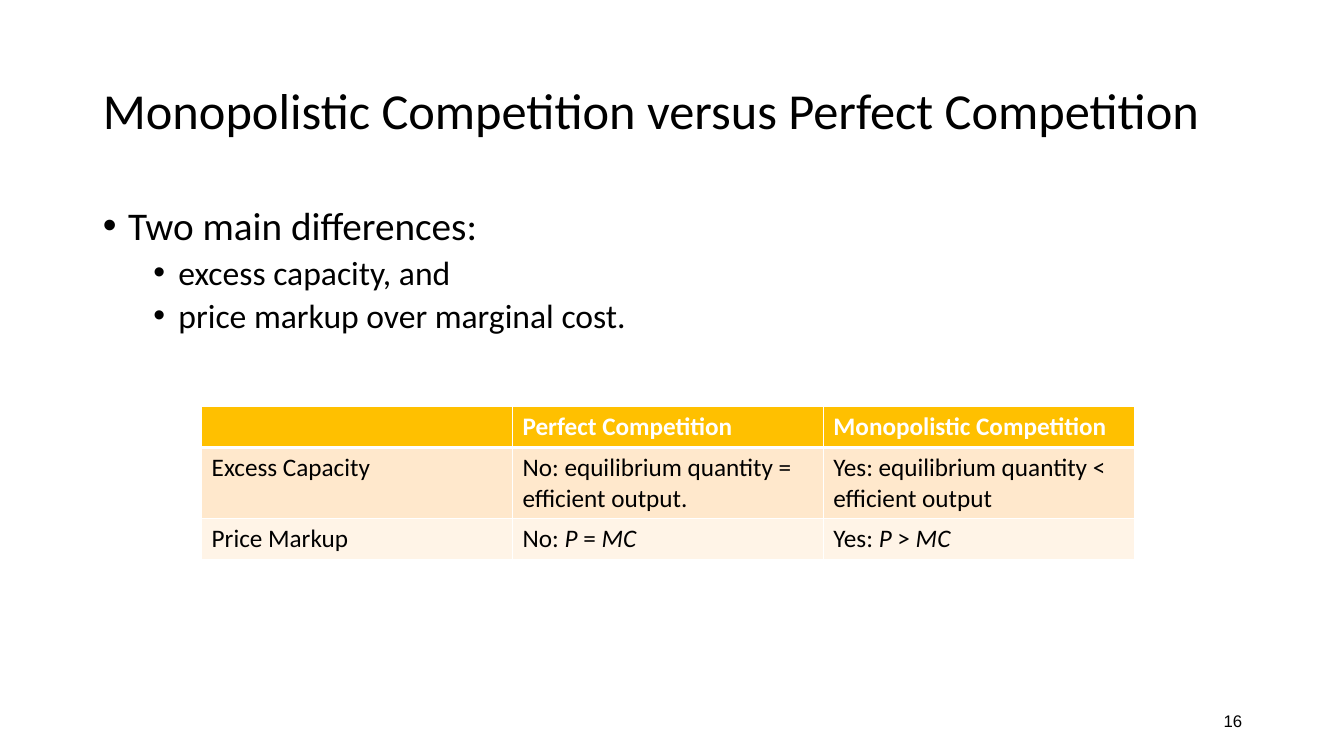
from lxml import etree
from pptx import Presentation
from pptx.dml.color import RGBColor
from pptx.enum import text
from pptx.oxml import ns
from pptx.util import Inches, Pt

BLACK, WHITE = "000000", "FFFFFF"
HEADER_FILL, ROW_FILLS = "FFC000", ("FFE8CC", "FFF4E7")

# Each body entry is a list of (text, italic) pieces
COMPARISON = [
    ["", "Perfect Competition", "Monopolistic Competition"],
    ["Excess Capacity", "No: equilibrium quantity = efficient output.",
     "Yes: equilibrium quantity < efficient output"],
    ["Price Markup",
     [("No: ", False), ("P", True), (" = ", False), ("MC", True)],
     [("Yes: ", False), ("P", True), (" > ", False), ("MC", True)]],
]
ROW_HEIGHTS = (0.41, 0.7, 0.41)


def color(hex_value):
    return RGBColor.from_string(hex_value)


def set_font(paragraph, size, hex_value=BLACK, name="Calibri", bold=False):
    font = paragraph.font
    font.size, font.name, font.bold = Pt(size), name, bold
    font.color.rgb = color(hex_value)


def place(shape, box):
    shape.left, shape.top, shape.width, shape.height = map(Inches, box)


def set_bullet(paragraph, margin, hanging=0.25):
    properties = paragraph._p.get_or_add_pPr()
    properties.set("marL", str(Inches(margin)))
    properties.set("indent", str(-Inches(hanging)))
    font = etree.SubElement(properties, ns.qn("a:buFont"))
    font.set("typeface", "Arial")
    etree.SubElement(properties, ns.qn("a:buChar")).set("char", "•")


def set_borders(cell, widths):
    """Draw white borders; widths holds points for left, right, top, bottom."""
    properties = cell._tc.get_or_add_tcPr()
    for index, (side, width) in enumerate(zip("LRTB", widths)):
        line = etree.Element(ns.qn(f"a:ln{side}"), w=str(Pt(width)))
        fill = etree.SubElement(line, ns.qn("a:solidFill"))
        etree.SubElement(fill, ns.qn("a:srgbClr")).set("val", WHITE)
        properties.insert(index, line)


def add_title(slide, box, wording):
    title = slide.shapes.title
    place(title, box)
    frame = title.text_frame
    frame.text = wording
    frame.auto_size = text.MSO_AUTO_SIZE.NONE
    frame.vertical_anchor = text.MSO_ANCHOR.MIDDLE
    heading = frame.paragraphs[0]
    heading.alignment = text.PP_ALIGN.LEFT
    heading.line_spacing = 0.9
    set_font(heading, 36)


def add_differences(slide, box, entries):
    body = slide.placeholders[1]
    place(body, box)
    frame = body.text_frame
    frame.text = "\n".join(wording for wording, level in entries)
    frame.auto_size = text.MSO_AUTO_SIZE.NONE
    for entry, (wording, level) in zip(frame.paragraphs, entries):
        entry.level = level
        entry.line_spacing = 0.9
        entry.space_before = Pt(5 if level else 10)
        set_font(entry, 24 if level else 28)
        set_bullet(entry, 0.25 + 0.5 * level)


def add_comparison(slide, box, rows):
    table = slide.shapes.add_table(len(rows), len(rows[0]), *map(Inches, box)).table
    for row, height in zip(table.rows, ROW_HEIGHTS):
        row.height = Inches(height)
    for r, entries in enumerate(rows):
        is_header = r == 0
        for c, entry in enumerate(entries):
            cell = table.cell(r, c)
            cell.fill.solid()
            cell.fill.fore_color.rgb = color(HEADER_FILL if is_header else ROW_FILLS[r - 1])
            set_borders(cell, (1, 1, 3 if r == 1 else 1, 3 if is_header else 1))
            paragraph = cell.text_frame.paragraphs[0]
            set_font(paragraph, 18, WHITE if is_header else BLACK, bold=is_header)
            if isinstance(entry, str):
                paragraph.text = entry
                continue
            for piece, italic in entry:
                run = paragraph.add_run()
                run.text = piece
                run.font.italic = italic


def add_page_number(slide, box, number):
    frame = slide.shapes.add_textbox(*map(Inches, box)).text_frame
    frame.word_wrap = True
    frame.vertical_anchor = text.MSO_ANCHOR.MIDDLE
    page = frame.paragraphs[0]
    page.text = number
    page.alignment = text.PP_ALIGN.RIGHT
    set_font(page, 12, name="Arial")


def main():
    deck = Presentation()
    deck.slide_width, deck.slide_height = Inches(13.33), Inches(7.5)
    slide = deck.slides.add_slide(deck.slide_layouts[1])

    add_title(slide, (0.92, 0.4, 11.5, 1.45),
              "Monopolistic Competition versus Perfect Competition")
    add_differences(slide, (0.92, 2, 11.5, 4.76), [
        ("Two main differences:", 0),
        ("excess capacity, and", 1),
        ("price markup over marginal cost.", 1),
    ])
    add_page_number(slide, (9.42, 6.95, 3, 0.4), "16")
    add_comparison(slide, (2, 4.03, 9.25, 1.51), COMPARISON)

    deck.save("out.pptx")


if __name__ == "__main__":
    main()
